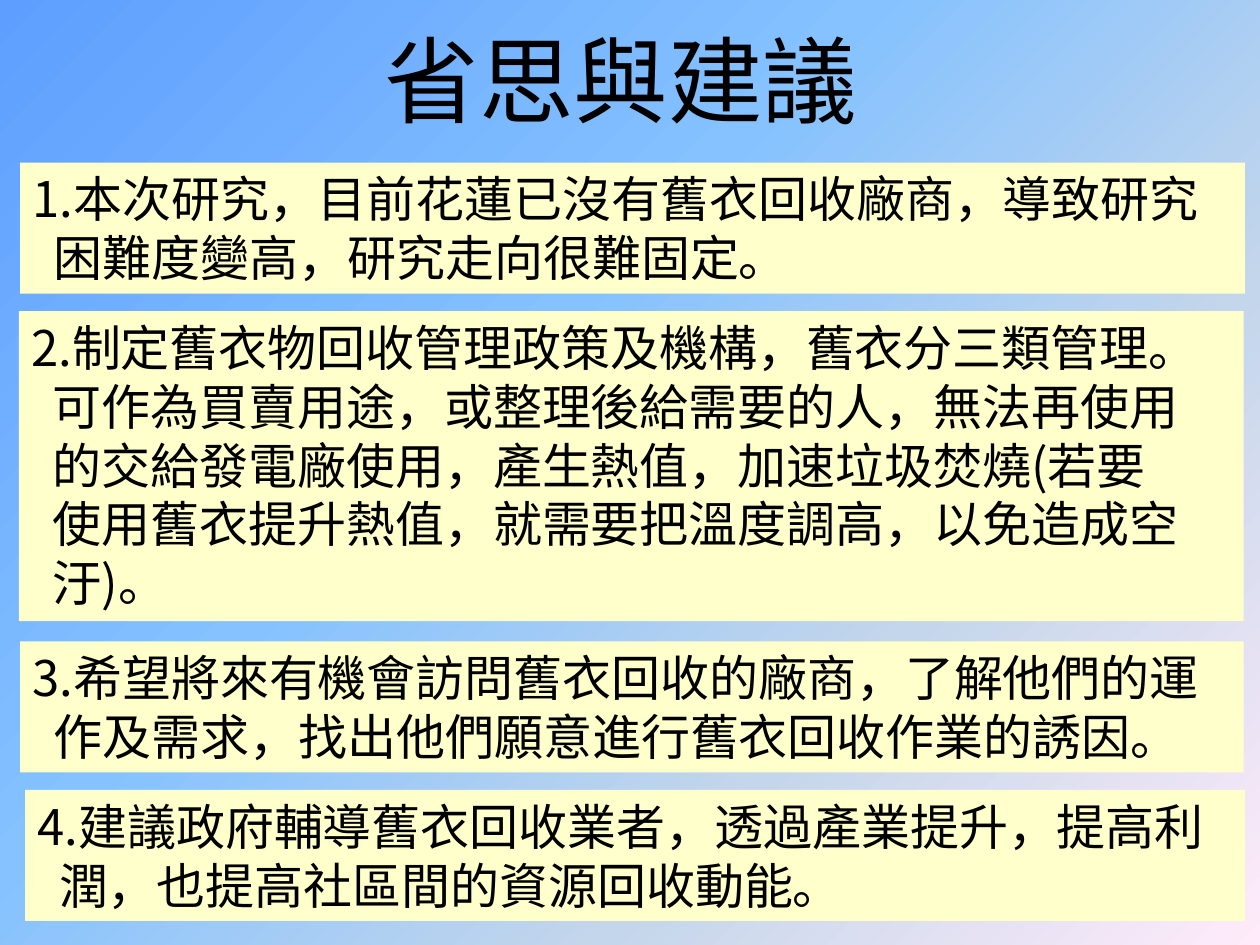
from lxml import etree
from pptx import Presentation
from pptx.dml.color import RGBColor
from pptx.enum import shapes, text
from pptx.oxml.ns import qn
from pptx.util import Inches, Pt

FONT = "Noto Sans CJK SC"
COLORS = {"ink": "000000", "panel": "FFFFCC"}
SKY = [(0, "5E9EFF"), (40, "85C2FF"), (70, "C4D6EB"), (100, "FFEBFA")]
HANG = 0.17

# left, top, width, height, lines
PANELS = [
    (0.16, 1.29, 9.72, 1.04, [
        "1.本次研究，目前花蓮已沒有舊衣回收廠商，導致研究",
        "困難度變高，研究走向很難固定。"]),
    (0.15, 2.47, 9.72, 2.46, [
        "2.制定舊衣物回收管理政策及機構，舊衣分三類管理。",
        "可作為買賣用途，或整理後給需要的人，無法再使用",
        "的交給發電廠使用，產生熱值，加速垃圾焚燒(若要",
        "使用舊衣提升熱值，就需要把溫度調高，以免造成空",
        "汙)。"]),
    (0.16, 5.09, 9.71, 1.04, [
        "3.希望將來有機會訪問舊衣回收的廠商，了解他們的運",
        "作及需求，找出他們願意進行舊衣回收作業的誘因。"]),
    (0.2, 6.27, 9.68, 1.04, [
        "4.建議政府輔導舊衣回收業者，透過產業提升，提高利",
        "潤，也提高社區間的資源回收動能。"]),
]


def add_text(p, content, size=28, color="ink", align=text.PP_ALIGN.LEFT, indent=0):
    p.alignment = align
    p._p.get_or_add_pPr().set("marL", str(Inches(indent)))
    r = p.add_run()
    r.text = content
    r.font.size = Pt(size)
    r.font.name = FONT
    r.font.color.rgb = RGBColor.from_string(COLORS[color])
    etree.SubElement(r._r.get_or_add_rPr(), qn("a:ea"), typeface=FONT)


def place(sp, left, top, width, height):
    sp.left, sp.top = Inches(left), Inches(top)
    sp.width, sp.height = Inches(width), Inches(height)


class Deck:
    def __init__(self, prs):
        self.slide = prs.slides.add_slide(prs.slide_layouts[5])

    def background(self, stops):
        """Diagonal gradient from top left to bottom right."""
        fill = self.slide.background.fill
        fill.gradient()
        fill.gradient_angle = 315
        stop_list = next(self.slide.element.iter(qn("a:gsLst")))
        for old in list(stop_list):
            stop_list.remove(old)
        for percent, color in stops:
            stop = etree.SubElement(stop_list, qn("a:gs"), pos=str(percent * 1000))
            etree.SubElement(stop, qn("a:srgbClr"), val=color)

    def title(self, content, *box):
        sp = self.slide.shapes.title
        place(sp, *box)
        tf = sp.text_frame
        tf.vertical_anchor = text.MSO_ANCHOR.MIDDLE
        add_text(tf.paragraphs[0], content, size=54, align=text.PP_ALIGN.CENTER)

    def panel(self, lines, *box):
        """Filled box whose lines after the first are indented."""
        sp = self.slide.shapes.add_shape(
            shapes.MSO_SHAPE.RECTANGLE, *(Inches(v) for v in box))
        sp.shadow.inherit = False
        sp.fill.solid()
        sp.fill.fore_color.rgb = RGBColor.from_string(COLORS["panel"])
        sp.line.fill.background()
        tf = sp.text_frame
        tf.word_wrap = True
        tf.auto_size = text.MSO_AUTO_SIZE.SHAPE_TO_FIT_TEXT
        tf.vertical_anchor = text.MSO_ANCHOR.TOP
        for i, line in enumerate(lines):
            p = tf.add_paragraph() if i else tf.paragraphs[0]
            add_text(p, line, indent=HANG if i else 0)


def main():
    prs = Presentation()
    prs.slide_width, prs.slide_height = Inches(10), Inches(7.5)
    deck = Deck(prs)
    deck.background(SKY)
    deck.title("省思與建議", 0.43, 0, 9, 1.25)
    for *box, lines in PANELS:
        deck.panel(lines, *box)
    prs.save("out.pptx")


if __name__ == "__main__":
    main()
